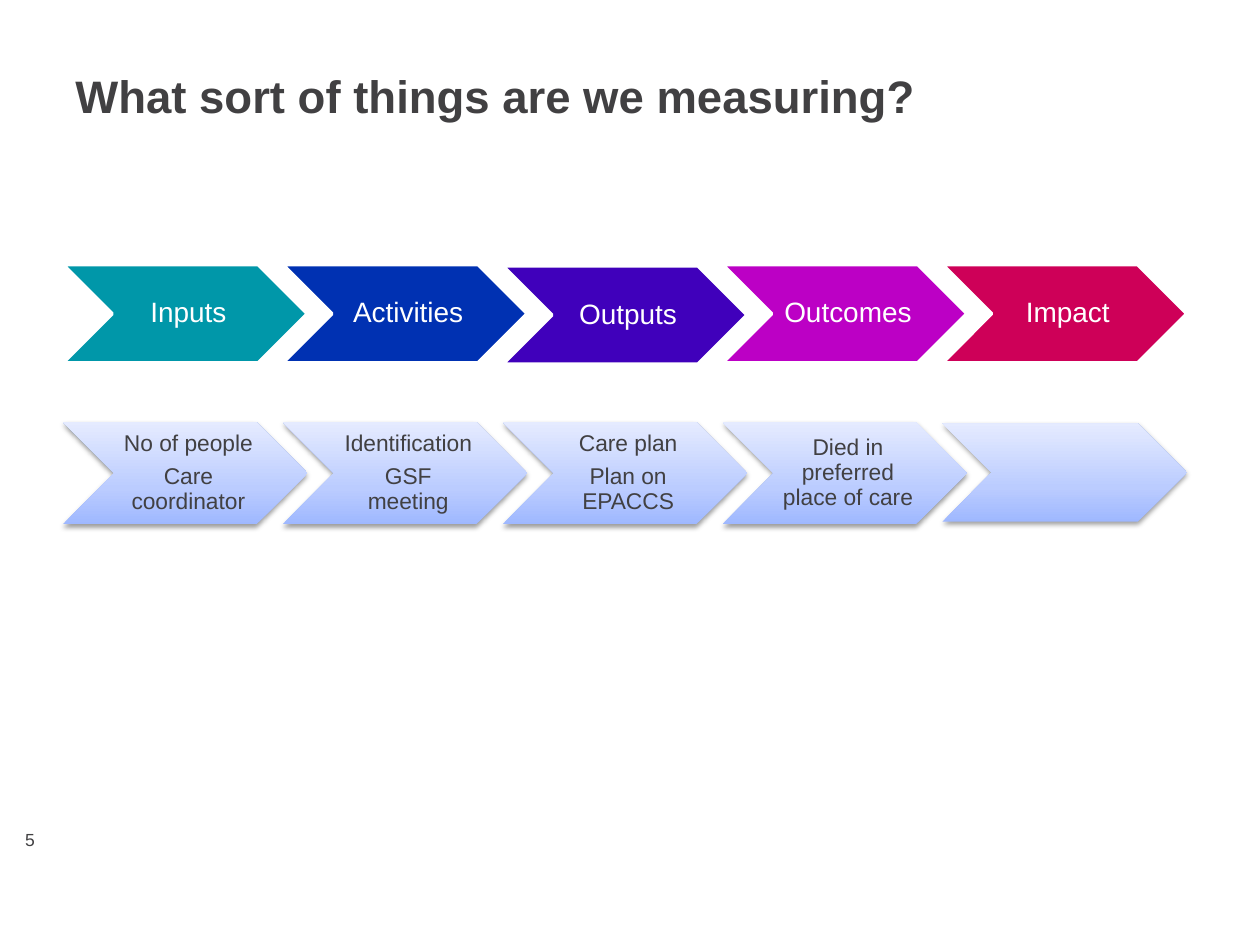
from copy import deepcopy

from lxml.etree import SubElement
from pptx import Presentation
from pptx.dml.color import RGBColor as RGB
from pptx.enum.shapes import MSO_SHAPE as Shape
from pptx.enum.text import MSO_ANCHOR as Anchor, PP_ALIGN as Align
from pptx.oxml.ns import qn
from pptx.util import Inches, Pt

COLORS = {
    "text": "414042",
    "white": "FFFFFF",
    "teal": "0097A9",
    "blue": "0031B2",
    "violet": "4000BB",
    "magenta": "BC00C5",
    "red": "CE0058",
}
FADE = [(0, "9FB8FF"), (0.35, "BBCCFF"), (1, "E5EBFF")]

# label, colour, top
STAGES = [
    ("Inputs", "teal", 2.1),
    ("Activities", "blue", 2.1),
    ("Outputs", "violet", 2.11),
    ("Outcomes", "magenta", 2.1),
    ("Impact", "red", 2.1),
]
# lines, top, height
EXAMPLES = [
    (["No of people", "Care coordinator"], 3.35, 0.81),
    (["Identification", "GSF meeting"], 3.35, 0.81),
    (["Care plan", "Plan on EPACCS"], 3.35, 0.81),
    (["Died in preferred place of care"], 3.35, 0.81),
    ([], 3.36, 0.78),
]
LEFT, STEP, WIDTH = 0.5, 1.745, 1.94


def rgb(name):
    return RGB.from_string(COLORS[name])


def set_all(item, values):
    for name, value in values.items():
        setattr(item, name, value)


def add_text(shapes, box, lines, size, color="text", bold=False,
             inset=(0.1, 0.05, 0.1, 0.05), anchor=Anchor.TOP, para=None):
    """Add a text box; inset is left, top, right, bottom."""
    frame = shapes.add_textbox(*map(Inches, box)).text_frame
    left, top, right, bottom = map(Inches, inset)
    set_all(frame, {
        "word_wrap": True, "vertical_anchor": anchor,
        "margin_left": left, "margin_top": top,
        "margin_right": right, "margin_bottom": bottom,
    })
    frame.text = "\n".join(lines)
    for item in frame.paragraphs:
        set_all(item, para or {})
        set_all(item.font, {"name": "Arial", "size": Pt(size), "bold": bold})
        item.font.color.rgb = rgb(color)


def add_label(shapes, box, lines, size, color, pad):
    """Add the centred text of a chevron."""
    para = {"alignment": Align.CENTER, "line_spacing": 0.9,
            "space_after": Pt(0.35 * size)}
    add_text(shapes, box, lines, size, color, inset=(pad, 0.02, 0.02, 0.02),
             anchor=Anchor.MIDDLE, para=para)


def add_chevron(shapes, left, top, height):
    box = map(Inches, (left, top, WIDTH, height))
    shape = shapes.add_shape(Shape.CHEVRON, *box)
    shape.shadow.inherit = False
    return shape


def fade(shape):
    """Fill with a vertical gradient, dark at the foot."""
    fill = shape.fill
    fill.gradient()
    fill.gradient_angle = 90
    stops = shape._element.spPr.find(qn("a:gradFill")).find(qn("a:gsLst"))
    stops.append(deepcopy(stops[0]))
    for stop, (place, color) in zip(fill.gradient_stops, FADE):
        stop.position = place
        stop.color.rgb = RGB.from_string(color)


def add_shadow(shape):
    effects = shape._element.spPr.find(qn("a:effectLst"))
    outer = SubElement(effects, qn("a:outerShdw"), blurRad=str(Pt(3.1)),
                       dist=str(Pt(1.6)), dir="5400000", rotWithShape="0")
    color = SubElement(outer, qn("a:srgbClr"), val="000000")
    SubElement(color, qn("a:alpha"), val="38000")


def add_stages(slide):
    shapes = slide.shapes.add_group_shape().shapes
    for col, (label, color, top) in enumerate(STAGES):
        left = LEFT + col * STEP
        shape = add_chevron(shapes, left, top, 0.78)
        shape.fill.solid()
        shape.fill.fore_color.rgb = rgb(color)
        shape.line.color.rgb = rgb("white")
        shape.line.width = Pt(2)
        add_label(shapes, (left + 0.39, top, 1.16, 0.78), [label],
                  16, "white", 0.07)


def add_examples(slide):
    shapes = slide.shapes.add_group_shape().shapes
    for col, (lines, top, height) in enumerate(EXAMPLES):
        left = LEFT + col * STEP
        shape = add_chevron(shapes, left, top, height)
        fade(shape)
        shape.line.fill.background()
        add_shadow(shape)
        if lines:
            add_label(shapes, (left + 0.41, top, 1.13, height), lines,
                      13, "text", 0.06)


def main():
    deck = Presentation()
    set_all(deck, {"slide_width": Inches(10), "slide_height": Inches(7.5)})
    slide = deck.slides.add_slide(deck.slide_layouts[6])
    add_text(slide.shapes, (0.5, 0.49, 8.93, 0.99),
             ["What sort of things are we measuring?"], 26, bold=True)
    add_text(slide.shapes, (0.2, 6.54, 0.47, 0.24), ["5"], 10,
             inset=(0, 0.05, 0.04, 0.05), anchor=Anchor.MIDDLE)
    add_stages(slide)
    add_examples(slide)
    deck.save("out.pptx")


if __name__ == "__main__":
    main()
